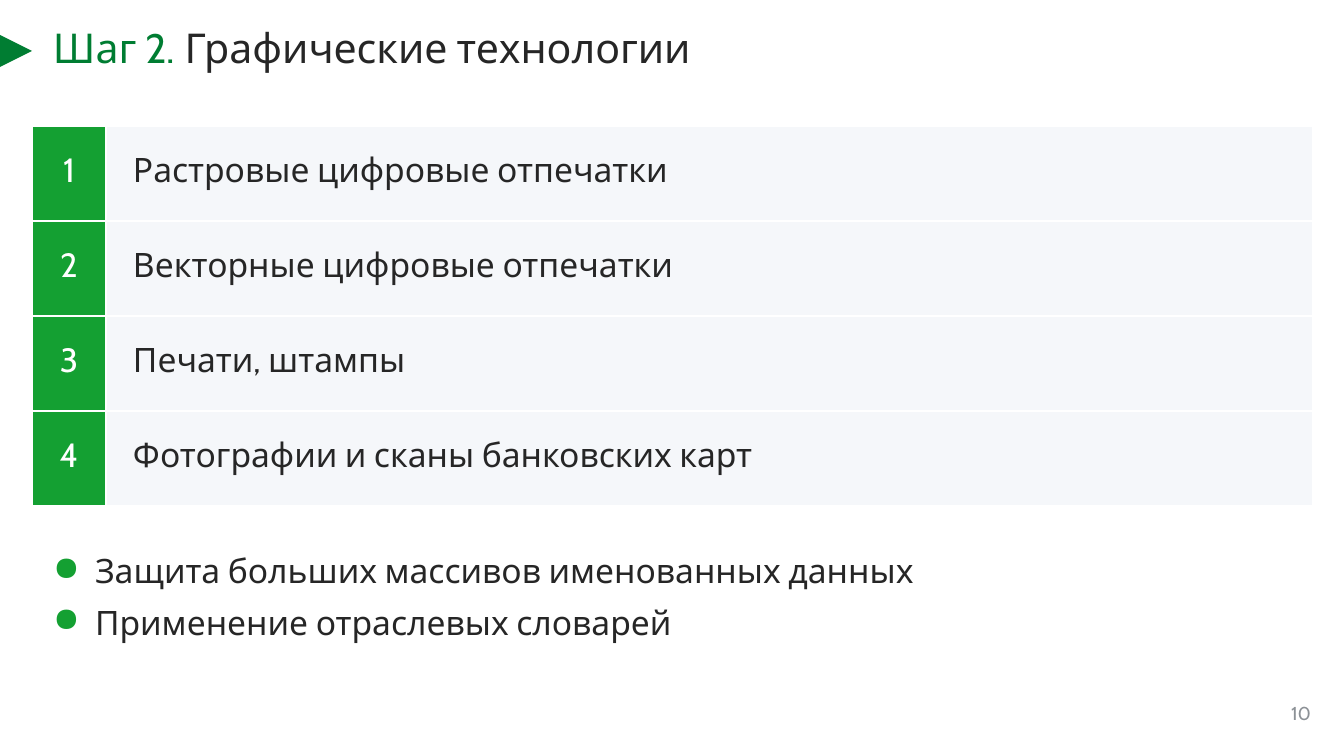
from lxml import etree
from pptx import Presentation
from pptx import util as u
from pptx.dml.color import RGBColor
from pptx.enum import shapes, text
from pptx.oxml.ns import qn

PX = u.Inches(10) / 1344
THEME = {
    "font": "Cabin",
    "dark_green": "007D32", "green": "14A032", "ink": "262626",
    "grey": "8C9196", "pale": "F5F7FA", "white": "FFFFFF",
    "title": 22, "body": 18, "number": 10,
}


def px(*lengths):
    return [u.Emu(round(length * PX)) for length in lengths]


def write(paragraph, words, size, color):
    run = paragraph.add_run()
    run.text = words
    font_format = {"name": THEME["font"], "size": u.Pt(THEME[size])}
    for key, value in font_format.items():
        setattr(run.font, key, value)
    run.font.color.rgb = RGBColor.from_string(THEME[color])


deck = Presentation()
deck.slide_width, deck.slide_height = px(1344, 756)
slide = deck.slides.add_slide(deck.slide_layouts[6])

# Text areas, all without inner margins
frames = {}
areas = {
    "number": (1259, 672, 52, 52),
    "title": (53, 27, 984, 52),
    "points": (53, 550, 1238, 158),
}
frame_format = {"word_wrap": True, "margin_left": 0, "margin_top": 0,
                "margin_right": 0, "margin_bottom": 0}
for part, area in areas.items():
    frames[part] = slide.shapes.add_textbox(*px(*area)).text_frame
    for key, value in frame_format.items():
        setattr(frames[part], key, value)

# Slide number
frames["number"].vertical_anchor = text.MSO_ANCHOR.BOTTOM
page = frames["number"].paragraphs[0]
page.alignment = text.PP_ALIGN.RIGHT
write(page, "10", "number", "grey")

# Title with its marker
marker = slide.shapes.add_shape(shapes.MSO_SHAPE.ISOSCELES_TRIANGLE, *px(0, 35, 32, 32))
marker.rotation = 90
marker.shadow.inherit = False
marker.fill.solid()
marker.fill.fore_color.rgb = RGBColor.from_string(THEME["dark_green"])
marker.line.fill.background()

title = frames["title"].paragraphs[0]
title.line_spacing = u.Pt(24)
write(title, "Шаг 2.", "title", "dark_green")
write(title, " Графические технологии", "title", "ink")

# Bulleted points
points = [("Защита больших массивов именованных данных", 12),
          ("Применение отраслевых словарей", 6)]
indent = px(42)[0]
for i, (words, space) in enumerate(points):
    point = frames["points"].add_paragraph() if i else frames["points"].paragraphs[0]
    point.space_before = u.Pt(space)
    write(point, words, "body", "ink")
    props = point._p.get_or_add_pPr()
    props.set("marL", str(indent))
    props.set("indent", str(-indent))
    bullet_color = etree.SubElement(props, qn("a:buClr"))
    etree.SubElement(bullet_color, qn("a:srgbClr"), val=THEME["green"])
    etree.SubElement(props, qn("a:buChar"), char="●")

# Numbered table of technologies
technologies = ["Растровые цифровые отпечатки", "Векторные цифровые отпечатки",
                "Печати, штампы", "Фотографии и сканы банковских карт"]
columns = [
    {"width": 74, "fill": "green", "ink": "white", "left": 0, "right": 0,
     "align": text.PP_ALIGN.CENTER},
    {"width": 1207, "fill": "pale", "ink": "ink", "left": 27, "right": 22,
     "align": text.PP_ALIGN.LEFT},
]
row_height = 95
table = slide.shapes.add_table(
    len(technologies), len(columns),
    *px(32, 126, sum(c["width"] for c in columns), row_height * len(technologies))).table
table.first_row = table.horz_banding = False
for column, look in zip(table.columns, columns):
    column.width = px(look["width"])[0]

for r, technology in enumerate(technologies):
    table.rows[r].height = px(row_height)[0]
    for c, (words, look) in enumerate(zip((str(r + 1), technology), columns)):
        cell = table.cell(r, c)
        left, top, right, bottom = px(look["left"], 0, look["right"], 5)
        cell_format = {"margin_left": left, "margin_top": top, "margin_right": right,
                       "margin_bottom": bottom, "vertical_anchor": text.MSO_ANCHOR.MIDDLE}
        for key, value in cell_format.items():
            setattr(cell, key, value)
        entry = cell.text_frame.paragraphs[0]
        entry.alignment = look["align"]
        entry.space_before = u.Pt(6)
        write(entry, words, "body", look["ink"])

        # White borders come before the fill in the cell properties
        props = cell._tc.get_or_add_tcPr()
        for side in ("a:lnL", "a:lnR", "a:lnT", "a:lnB"):
            border = etree.SubElement(props, qn(side), w=str(u.Pt(1)))
            paint = etree.SubElement(border, qn("a:solidFill"))
            etree.SubElement(paint, qn("a:srgbClr"), val=THEME["white"])
        cell.fill.solid()
        cell.fill.fore_color.rgb = RGBColor.from_string(THEME[look["fill"]])

deck.save("out.pptx")
